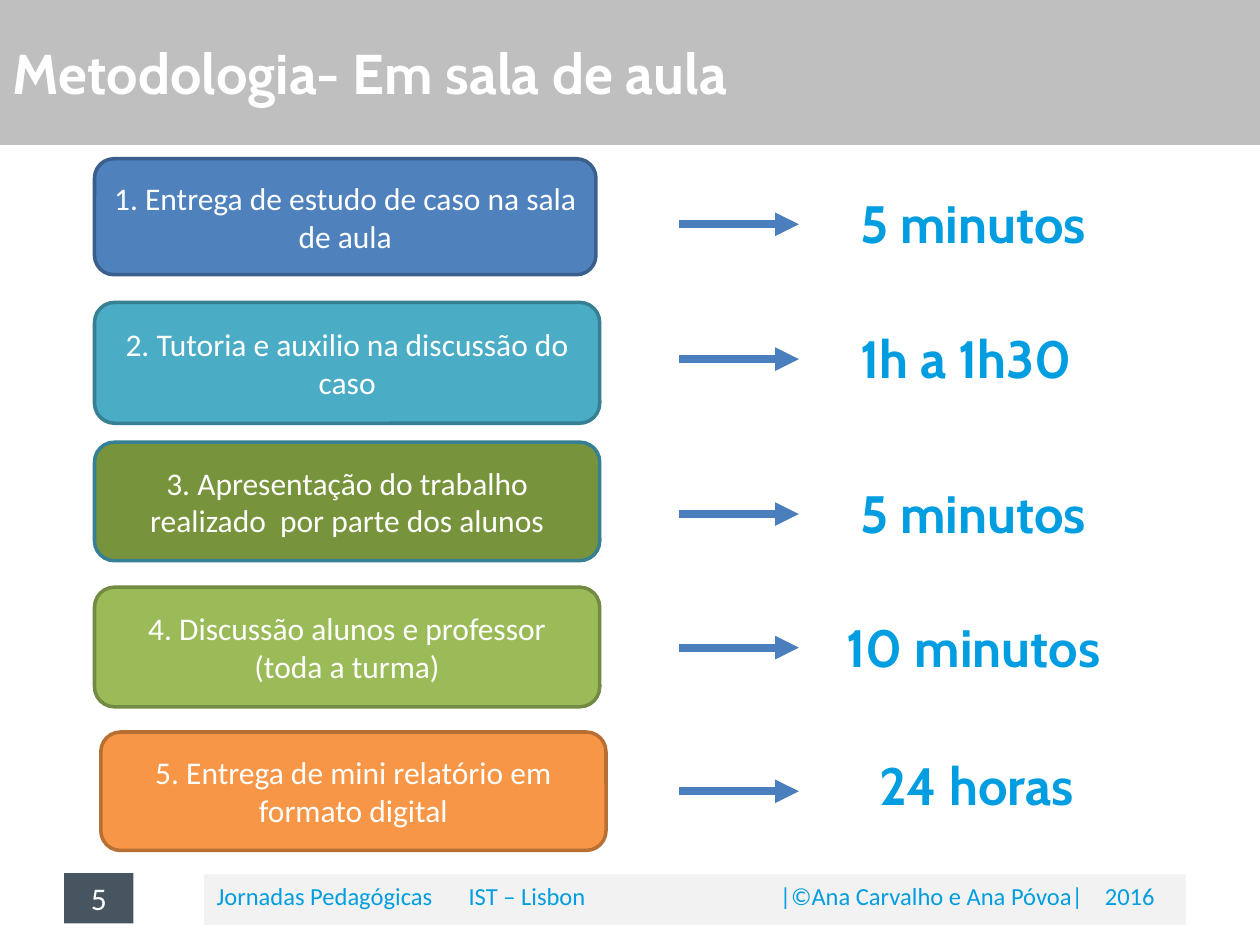
from lxml import etree
from pptx import Presentation
from pptx.dml.color import RGBColor
from pptx.enum.shapes import MSO_CONNECTOR, MSO_SHAPE
from pptx.enum.text import MSO_ANCHOR, PP_ALIGN
from pptx.oxml.ns import qn
from pptx.util import Inches, Pt

RECT, ROUNDED = MSO_SHAPE.RECTANGLE, MSO_SHAPE.ROUNDED_RECTANGLE
STRAIGHT = MSO_CONNECTOR.STRAIGHT
LEFT, CENTER = PP_ALIGN.LEFT, PP_ALIGN.CENTER
TOP, MIDDLE = MSO_ANCHOR.TOP, MSO_ANCHOR.MIDDLE

WHITE = RGBColor(0xFF, 0xFF, 0xFF)
BANNER = RGBColor(0xBF, 0xBF, 0xBF)
SLATE = RGBColor(0x46, 0x55, 0x5F)
PALE = RGBColor(0xF2, 0xF2, 0xF2)
CYAN = RGBColor(0x00, 0x9D, 0xE0)
ARROW = RGBColor(0x4B, 0x7E, 0xBC)
BLUE, BLUE_EDGE = RGBColor(0x4F, 0x81, 0xBD), RGBColor(0x3A, 0x5F, 0x8C)
TEAL, TEAL_EDGE = RGBColor(0x4B, 0xAC, 0xC6), RGBColor(0x37, 0x7F, 0x92)
OLIVE = RGBColor(0x77, 0x93, 0x3C)
GREEN, GREEN_EDGE = RGBColor(0x9B, 0xBB, 0x59), RGBColor(0x73, 0x8A, 0x42)
ORANGE, ORANGE_EDGE = RGBColor(0xF7, 0x96, 0x46), RGBColor(0xB7, 0x6F, 0x34)

# Step text, box (left, top, width, height), fill, edge
STEPS = [
    ("1. Entrega de estudo de caso na sala de aula",
     (0.75, 1.26, 3.98, 0.92), BLUE, BLUE_EDGE),
    ("2. Tutoria e auxilio na discussão do caso",
     (0.75, 2.4, 4.01, 0.96), TEAL, TEAL_EDGE),
    ("3. Apresentação do trabalho realizado  por parte dos alunos",
     (0.75, 3.51, 4.01, 0.94), OLIVE, TEAL_EDGE),
    ("4. Discussão alunos e professor (toda a turma)",
     (0.75, 4.66, 4.01, 0.95), GREEN, GREEN_EDGE),
    ("5. Entrega de mini relatório em formato digital",
     (0.8, 5.81, 4.01, 0.94), ORANGE, ORANGE_EDGE),
]
# Duration, arrow height, label (left, top, width)
DURATIONS = [
    ("5 minutos", 1.78, (6.73, 1.47, 2.15)),
    ("1h a 1h30", 2.85, (6.73, 2.54, 2.08)),
    ("5 minutos", 4.08, (6.73, 3.77, 2.15)),
    ("10 minutos", 5.14, (6.62, 4.83, 2.39)),
    ("24 horas", 6.28, (6.88, 5.93, 1.87)),
]
FOOTER = "Jornadas Pedagógicas\tIST – Lisbon\t|©Ana Carvalho e Ana Póvoa|\t2016"
FOOTER_TABS = (2, 4.47, 7.05)


def write(sp, text, size, color, font="Calibri", bold=False,
          align=LEFT, anchor=TOP):
    tf = sp.text_frame
    tf.vertical_anchor = anchor
    p = tf.paragraphs[0]
    p.alignment = align
    r = p.add_run()
    r.text = text
    r.font.name, r.font.size, r.font.bold = font, Pt(size), bold
    r.font.color.rgb = color


def add_box(s, kind, box, fill, edge=None):
    sp = s.shapes.add_shape(kind, *map(Inches, box))
    sp.shadow.inherit = False
    sp.fill.solid()
    sp.fill.fore_color.rgb = fill
    if edge is None:
        sp.line.fill.background()
    else:
        sp.line.color.rgb = edge
        sp.line.width = Pt(2)
    return sp


def add_tabs(p, stops):
    tabs = etree.SubElement(p._p.get_or_add_pPr(), qn("a:tabLst"))
    for stop in stops:
        etree.SubElement(tabs, qn("a:tab"), pos=str(Inches(stop)), algn="l")


def add_title(s, text):
    title = s.shapes.title
    title.left, title.top = Inches(0), Inches(0)
    title.width, title.height = Inches(6.97), Inches(1.15)
    title.fill.solid()
    title.fill.fore_color.rgb = BANNER
    write(title, text, 32, WHITE, "Cabin", True, anchor=MIDDLE)


def add_arrow(s, y):
    line = s.shapes.add_connector(
        STRAIGHT, Inches(5.39), Inches(y), Inches(6.34), Inches(y))
    line.line.color.rgb = ARROW
    line.line.width = Pt(4.5)
    etree.SubElement(line.line._get_or_add_ln(), qn("a:tailEnd"),
                     type="triangle")
    etree.SubElement(line._element.spPr, qn("a:effectLst"))


def add_duration(s, text, left, top, width):
    sp = s.shapes.add_textbox(*map(Inches, (left, top, width, 0.61)))
    sp.text_frame.word_wrap = False
    write(sp, text, 30, CYAN, "Cabin", True)


def add_footer(s):
    number = add_box(s, RECT, (0.51, 6.93, 0.55, 0.4), SLATE)
    write(number, "5", 18, WHITE, align=CENTER)
    bar = add_box(s, RECT, (1.62, 6.94, 7.79, 0.4), PALE)
    add_tabs(bar.text_frame.paragraphs[0], FOOTER_TABS)
    write(bar, FOOTER, 14, CYAN)


def main():
    prs = Presentation()
    prs.slide_width, prs.slide_height = Inches(10), Inches(7.5)
    s = prs.slides.add_slide(prs.slide_layouts[5])

    # Banner and footer
    add_title(s, "Metodologia- Em sala de aula")
    add_box(s, RECT, (6.97, 0, 3.03, 1.15), BANNER)
    add_footer(s)

    # Classroom steps
    for text, box, fill, edge in STEPS:
        step = add_box(s, ROUNDED, box, fill, edge)
        write(step, text, 18, WHITE, align=CENTER, anchor=MIDDLE)

    # Time given to each step
    for text, y, place in DURATIONS:
        add_arrow(s, y)
        add_duration(s, text, *place)

    prs.save("out.pptx")


if __name__ == "__main__":
    main()
